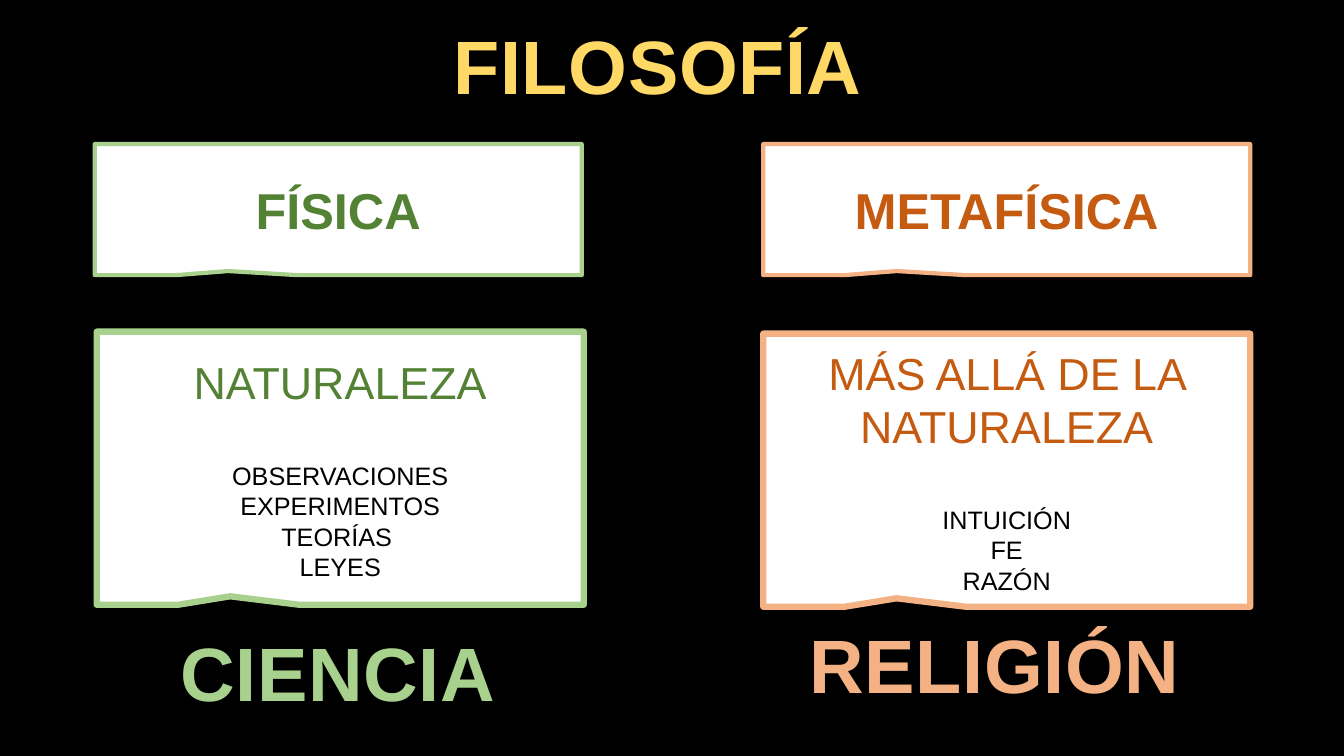
from pptx import Presentation
from pptx.dml.color import RGBColor
from pptx.enum.shapes import MSO_SHAPE
from pptx.enum.text import MSO_ANCHOR, PP_ALIGN
from pptx.util import Inches, Pt

RECTANGLE = MSO_SHAPE.RECTANGLE
CALLOUT = MSO_SHAPE.RECTANGULAR_CALLOUT
MIDDLE = MSO_ANCHOR.MIDDLE
CENTER = PP_ALIGN.CENTER

SLIDE_SIZE = (13.33, 7.5)
BLACK, WHITE = "000000", "FFFFFF"
POINTER = (-0.226, 0.469)
BOX_WIDTH, HEADER_TOP, HEADER_HEIGHT, DETAIL_HEIGHT = 4.83, 1.43, 1.3, 2.71
LABEL_HEIGHT = 1.01
TOPIC_GAP = 36.8  # points between a topic and its list

TITLE = {"text": "FILOSOFÍA", "color": "FFD966", "at": (4.17, 0.14), "width": 4.71}
BRANCHES = [
    {
        "name": "FÍSICA", "dark": "548235", "light": "A9D18E",
        "header_left": 0.94, "detail_at": (0.96, 3.29),
        "topic": "NATURALEZA",
        "items": ["OBSERVACIONES", "EXPERIMENTOS", "TEORÍAS ", "LEYES"],
        "label": {"text": "CIENCIA", "at": (1.67, 6.16), "width": 3.36},
    },
    {
        "name": "METAFÍSICA", "dark": "C55A11", "light": "F4B183",
        "header_left": 7.57, "detail_at": (7.57, 3.31),
        "topic": "MÁS ALLÁ DE LA NATURALEZA",
        "items": ["INTUICIÓN", "FE", "RAZÓN"],
        "label": {"text": "RELIGIÓN", "at": (7.87, 6.08), "width": 3.99},
    },
]


def rgb(color):
    return RGBColor.from_string(color)


def add_box(slide, kind, box, fill, line, line_width):
    shape = slide.shapes.add_shape(kind, *map(Inches, box))
    shape.shadow.inherit = False
    shape.fill.solid()
    shape.fill.fore_color.rgb = rgb(fill)
    shape.line.color.rgb = rgb(line)
    shape.line.width = Pt(line_width)
    return shape


def write(frame, lines):
    """Fill a text frame with centred (text, size, color, bold) lines."""
    frame.word_wrap = True
    for index, (text, size, color, bold) in enumerate(lines):
        paragraph = frame.paragraphs[0] if index == 0 else frame.add_paragraph()
        paragraph.alignment = CENTER
        run = paragraph.add_run()
        run.text = text
        run.font.color.rgb = rgb(color)
        for name, value in {"name": "Arial", "size": Pt(size), "bold": bold}.items():
            setattr(run.font, name, value)


def add_callout(slide, box, line, line_width, lines):
    shape = add_box(slide, CALLOUT, box, WHITE, line, line_width)
    for index, value in enumerate(POINTER):
        shape.adjustments[index] = value
    shape.text_frame.vertical_anchor = MIDDLE
    write(shape.text_frame, lines)
    return shape


def add_label(slide, text, color, at, width):
    box = slide.shapes.add_textbox(*map(Inches, (*at, width, LABEL_HEIGHT)))
    write(box.text_frame, [(text, 54, color, True)])
    run = box.text_frame.paragraphs[0].runs[0]
    run.font._element.set("spc", "50")


def add_branch(slide, branch):
    dark, light = branch["dark"], branch["light"]
    header = (branch["header_left"], HEADER_TOP, BOX_WIDTH, HEADER_HEIGHT)
    add_callout(slide, header, light, 3, [(branch["name"], 36, dark, True)])

    lines = [(branch["topic"], 32, dark, False)]
    lines += [(item, 18, BLACK, False) for item in branch["items"]]
    detail = (*branch["detail_at"], BOX_WIDTH, DETAIL_HEIGHT)
    shape = add_callout(slide, detail, light, 4.5, lines)
    shape.text_frame.paragraphs[0].space_after = Pt(TOPIC_GAP)

    add_label(slide, color=light, **branch["label"])


def main():
    presentation = Presentation()
    presentation.slide_width, presentation.slide_height = map(Inches, SLIDE_SIZE)
    slide = presentation.slides.add_slide(presentation.slide_layouts[6])
    add_box(slide, RECTANGLE, (0, 0, *SLIDE_SIZE), BLACK, BLACK, 1)
    for branch in BRANCHES:
        add_branch(slide, branch)
    add_label(slide, **TITLE)
    presentation.save("out.pptx")


if __name__ == "__main__":
    main()
